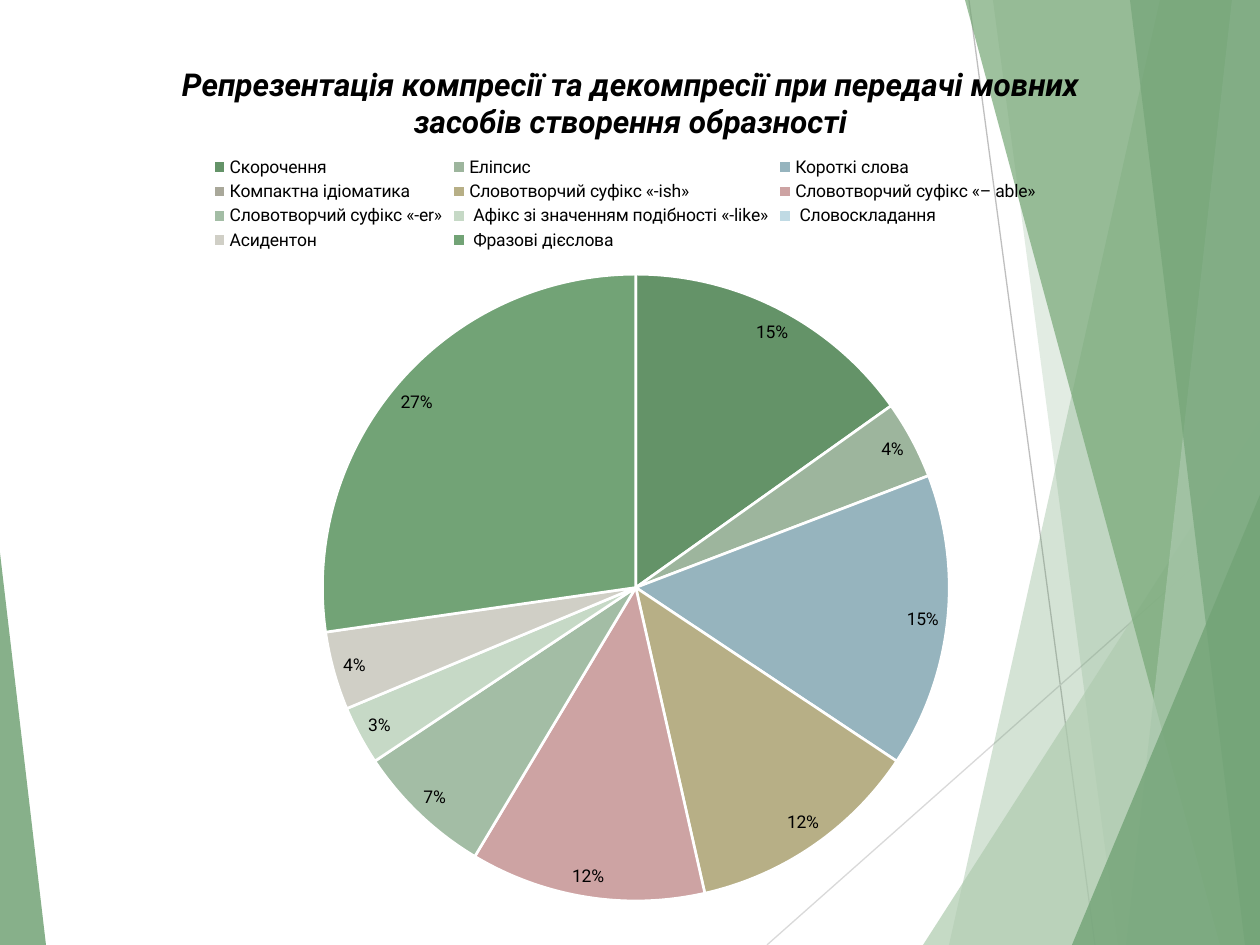
from lxml import etree
from pptx import Presentation
from pptx.chart.data import CategoryChartData
from pptx.dml.color import RGBColor
from pptx.enum.chart import XL_CHART_TYPE, XL_LABEL_POSITION, XL_LEGEND_POSITION
from pptx.enum.shapes import MSO_CONNECTOR, MSO_SHAPE
from pptx.oxml.ns import qn
from pptx.util import Pt

PX = 914400 // 126
WIDTH, HEIGHT = 1260, 945
FONT = "Roboto"
PIE = XL_CHART_TYPE.PIE
BEST_FIT = XL_LABEL_POSITION.BEST_FIT
LEGEND_TOP = XL_LEGEND_POSITION.TOP
STRAIGHT = MSO_CONNECTOR.STRAIGHT
TRIANGLE = MSO_SHAPE.ISOSCELES_TRIANGLE

COLORS = {
    "green": "72A376", "leaf": "76A776", "pale": "B0CCB0", "mist": "AAC8AD",
    "gray": "BFBFBF", "silver": "D9D9D9", "black": "000000", "white": "FFFFFF",
}
TITLE = ("Репрезентація компресії та декомпресії при передачі мовних "
         "засобів створення образності")
TITLE_FORMAT = {"name": FONT, "size": Pt(18), "bold": True, "italic": True}
TEXT_FORMAT = {"name": FONT, "size": Pt(10), "bold": False}

# Category, percent, slice colour
SLICES = [
    ("Скорочення", 15, "649368"),
    ("Еліпсис", 4, "9DB59D"),
    ("Короткі слова", 15, "96B4BE"),
    ("Компактна ідіоматика", 0, "A9A89A"),
    ("Словотворчий суфікс «-ish»", 12, "B7AF86"),
    ("Словотворчий суфікс «– able»", 12, "CDA3A3"),
    ("Словотворчий суфікс «-er»", 7, "A3BDA5"),
    (" Афікс зі значенням подібності «-like»", 3, "C6D9C6"),
    (" Словоскладання", 0, "C0DAE4"),
    ("Асидентон", 4, "D0CFC6"),
    (" Фразові дієслова", 27, "72A376"),
]

CHART_BOX = (54, 26, 1142, 893)
TITLE_SPOT = (176, 58)
LEGEND_BOX = (208, 153, 834, 102)
PIE_BOX = (322, 274, 627, 627)


def rgb(name):
    return RGBColor.from_string(COLORS.get(name, name))


def set_font(font, formats):
    for key, value in formats.items():
        setattr(font, key, value)
    font.color.rgb = rgb("black")


def add_line(page, start, end, color):
    line = page.shapes.add_connector(
        STRAIGHT, *(value * PX for value in (*start, *end)))
    line.line.color.rgb = rgb(color)
    line.line.width = Pt(0.75)
    etree.SubElement(line._element.spPr, qn("a:effectLst"))


def paint(shape, color, opacity):
    """Fill a shape with a see-through colour; opacity is in percent."""
    shape.shadow.inherit = False
    shape.line.fill.background()
    shape.fill.solid()
    shape.fill.fore_color.rgb = rgb(color)
    tint = shape._element.spPr.find(qn("a:solidFill"))[0]
    etree.SubElement(tint, qn("a:alpha"), val=str(opacity * 1000))


def add_band(page, top_x, bottom_x, color, opacity):
    """Band from a slanted left edge to the right edge of the slide."""
    builder = page.shapes.build_freeform(top_x, 0, scale=PX)
    builder.add_line_segments([(WIDTH, 0), (WIDTH, HEIGHT), (bottom_x, HEIGHT)])
    paint(builder.convert_to_shape(), color, opacity)


def add_corner(page, left, top, right, peak, color, opacity):
    """Triangle standing on the bottom edge of the slide."""
    shape = page.shapes.add_shape(
        TRIANGLE, left * PX, top * PX, (right - left) * PX, (HEIGHT - top) * PX)
    shape.adjustments[0] = peak
    paint(shape, color, opacity)


def place(element, box, inner=False):
    """Give a chart part a fixed place, as fractions of the chart."""
    left, top, width, height = CHART_BOX
    values = [(box[0] - left) / width, (box[1] - top) / height]
    values += [side / whole for side, whole in zip(box[2:], (width, height))]
    layout = element.get_or_add_layout() if hasattr(
        element, "get_or_add_layout") else element.find(qn("c:layout"))
    if layout is None:
        layout = etree.Element(qn("c:layout"))
        element.insert(0, layout)
    for child in list(layout):
        layout.remove(child)
    manual = etree.SubElement(layout, qn("c:manualLayout"))
    if inner:
        etree.SubElement(manual, qn("c:layoutTarget"), val="inner")
    for mode in ("xMode", "yMode"):
        etree.SubElement(manual, qn(f"c:{mode}"), val="edge")
    for key, value in zip("xywh", values):
        etree.SubElement(manual, qn(f"c:{key}"), val=f"{value:.3f}")


def add_pie(page):
    data = CategoryChartData()
    data.categories = [name for name, _, _ in SLICES]
    data.add_series("Series 1", [value for _, value, _ in SLICES])
    chart = page.shapes.add_chart(
        PIE, *(value * PX for value in CHART_BOX), data).chart
    set_font(chart.font, TEXT_FORMAT)

    # Title
    chart.has_title = True
    para = chart.chart_title.text_frame.paragraphs[0]
    span = para.add_run()
    span.text = TITLE
    set_font(span.font, TITLE_FORMAT)
    place(chart.chart_title._element, TITLE_SPOT)

    # Legend
    chart.has_legend = True
    chart.legend.position = LEGEND_TOP
    chart.legend.include_in_layout = False
    set_font(chart.legend.font, TEXT_FORMAT)
    place(chart.legend._element, LEGEND_BOX)

    # Slices and their labels
    plot = chart.plots[0]
    plot.vary_by_categories = True
    place(chart._chartSpace.chart.plotArea, PIE_BOX, inner=True)
    for index, (_, _, color) in enumerate(SLICES):
        piece = plot.series[0].points[index].format
        piece.fill.solid()
        piece.fill.fore_color.rgb = rgb(color)
        piece.line.color.rgb = rgb("white")
        piece.line.width = Pt(1.5)
    labels = plot.series[0].data_labels
    formats = {"show_percentage": True, "show_value": False,
               "number_format": "0%", "number_format_is_linked": False,
               "position": BEST_FIT}
    for key, value in formats.items():
        setattr(labels, key, value)
    set_font(labels.font, TEXT_FORMAT)


def main():
    deck = Presentation()
    deck.slide_width, deck.slide_height = WIDTH * PX, HEIGHT * PX
    page = deck.slides.add_slide(deck.slide_layouts[6])

    # Background facets
    add_line(page, (969, 0), (1095, HEIGHT), "gray")
    add_line(page, (WIDTH, 508), (767, HEIGHT), "silver")
    add_band(page, 1160, 949, "green", 30)
    add_band(page, 993, 1118, "green", 20)
    add_corner(page, 923, 420, WIDTH, 1, "pale", 72)
    add_band(page, 965, 1220, "leaf", 70)
    add_band(page, 1232, 1126, "mist", 70)
    add_band(page, 1130, 1245, "green", 65)
    add_corner(page, 1072, 495, WIDTH, 1, "green", 80)
    add_corner(page, 0, 553, 46, 0, "green", 85)

    add_pie(page)
    deck.save("out.pptx")


if __name__ == "__main__":
    main()
